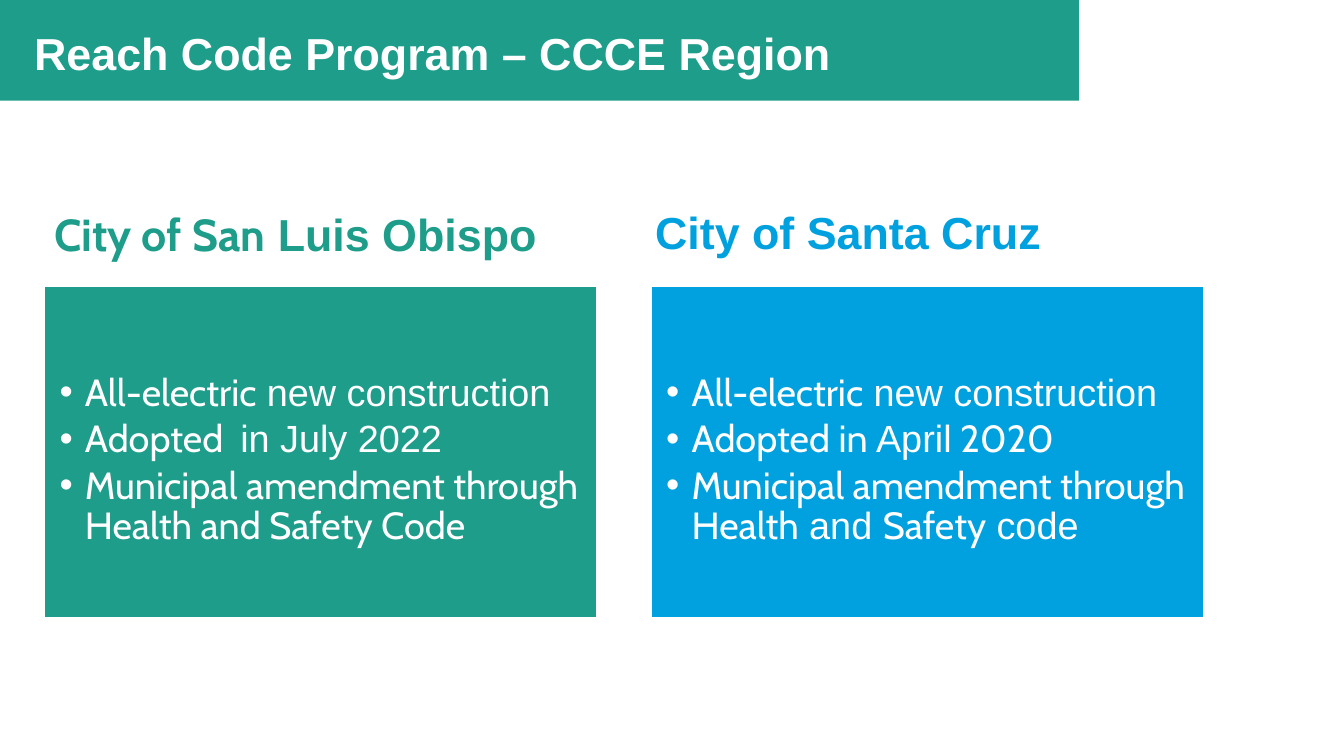
"""Build the slide comparing two cities in the reach code program."""
from lxml import etree
from pptx import Presentation
from pptx.dml.color import RGBColor
from pptx.enum.shapes import MSO_SHAPE
from pptx.enum.text import MSO_ANCHOR, MSO_AUTO_SIZE, PP_ALIGN
from pptx.oxml.ns import qn
from pptx.util import Cm, Pt

RECTANGLE = MSO_SHAPE.RECTANGLE
TOP = MSO_ANCHOR.TOP
NO_FIT = MSO_AUTO_SIZE.NONE
LEFT = PP_ALIGN.LEFT
GREEN = RGBColor(0x1E, 0x9D, 0x8B)
BLUE = RGBColor(0x00, 0xA1, 0xDE)
WHITE = RGBColor(0xFF, 0xFF, 0xFF)
SANS, CABIN = "Arial", "Cabin"

TITLE = [("Reach Code Program – CCCE Region", SANS)]
CITIES = [
    {
        "color": GREEN,
        "heading": [("City of San", CABIN), (" Luis Obispo", SANS)],
        "heading_place": (1.12, 5.23, 12.98, 2.08),
        "points": [
            [("All-electric", CABIN), (" new construction", SANS)],
            [("Adopted  ", CABIN), ("in July 2022", SANS)],
            [("Municipal amendment through Health and Safety Code", CABIN)],
        ],
    },
    {
        "color": BLUE,
        "heading": [("City of Santa Cruz", SANS)],
        "heading_place": (16.26, 5.18, 14.45, 2.08),
        "points": [
            [("All-electric", CABIN), (" new construction", SANS)],
            [("Adopted in", CABIN), (" April", SANS), (" 2020", CABIN)],
            [("Municipal amendment through Health", CABIN), (" and ", SANS),
             ("Safety", CABIN), (" code", SANS)],
        ],
    },
]
PANEL_LEFT, PANEL_STEP = 1.12, 15.29
PANEL_TOP, PANEL_WIDTH, PANEL_HEIGHT = 7.21, 13.92, 8.36


def place(box, left, top, width, height):
    """Move and size a box given in centimetres."""
    box.left, box.top = Cm(left), Cm(top)
    box.width, box.height = Cm(width), Cm(height)


def add_bullet(para):
    """Give a paragraph a hanging round bullet."""
    properties = para._p.get_or_add_pPr()
    properties.set("marL", str(Cm(0.64)))
    properties.set("indent", str(-Cm(0.64)))
    etree.SubElement(properties, qn("a:buChar")).set("char", "•")


def write(box, paragraphs, size, color, bold=False, bullets=False, after=0,
          insets=(0.25, 0.13, 0.25, 0.13)):
    """Fill a box with paragraphs of (text, font name) spans."""
    frame = box.text_frame
    frame.word_wrap, frame.auto_size = True, NO_FIT
    frame.vertical_anchor = TOP
    (frame.margin_left, frame.margin_top,
     frame.margin_right, frame.margin_bottom) = map(Cm, insets)
    for number, spans in enumerate(paragraphs):
        para = frame.add_paragraph() if number else frame.paragraphs[0]
        if bullets:
            add_bullet(para)
        para.alignment, para.line_spacing = LEFT, 0.9
        para.space_before, para.space_after = Pt(0), Pt(after)
        for text, name in spans:
            span = para.add_run()
            span.text = text
            span.font.name, span.font.size = name, Pt(size)
            span.font.bold, span.font.color.rgb = bold, color


def main():
    """Lay out the banner, title and city panels."""
    deck = Presentation()
    deck.slide_width, deck.slide_height = Cm(33.87), Cm(19.05)
    page = deck.slides.add_slide(deck.slide_layouts.get_by_name("Comparison"))
    title, *bodies = page.placeholders

    banner = page.shapes.add_shape(RECTANGLE, 0, 0, Cm(27.2), Cm(2.54))
    banner.shadow.inherit = False
    banner.fill.solid()
    banner.fill.fore_color.rgb = GREEN
    banner.line.fill.background()
    title.element.addprevious(banner.element)
    place(title, 0.61, 0.66, 23.6, 1.78)
    write(title, [TITLE], size=32, color=WHITE, bold=True)

    for number, city in enumerate(CITIES):
        heading, panel = bodies[2 * number:2 * number + 2]
        place(heading, *city["heading_place"])
        write(heading, [city["heading"]], size=32, color=city["color"], bold=True)
        place(panel, PANEL_LEFT + number * PANEL_STEP, PANEL_TOP,
              PANEL_WIDTH, PANEL_HEIGHT)
        panel.fill.solid()
        panel.fill.fore_color.rgb = city["color"]
        panel.line.color.rgb, panel.line.width = WHITE, Pt(1)
        write(panel, city["points"], size=27, color=WHITE, bullets=True,
              after=4, insets=(0.38, 2.2, 0.38, 0.38))
    deck.save("out.pptx")


if __name__ == "__main__":
    main()
